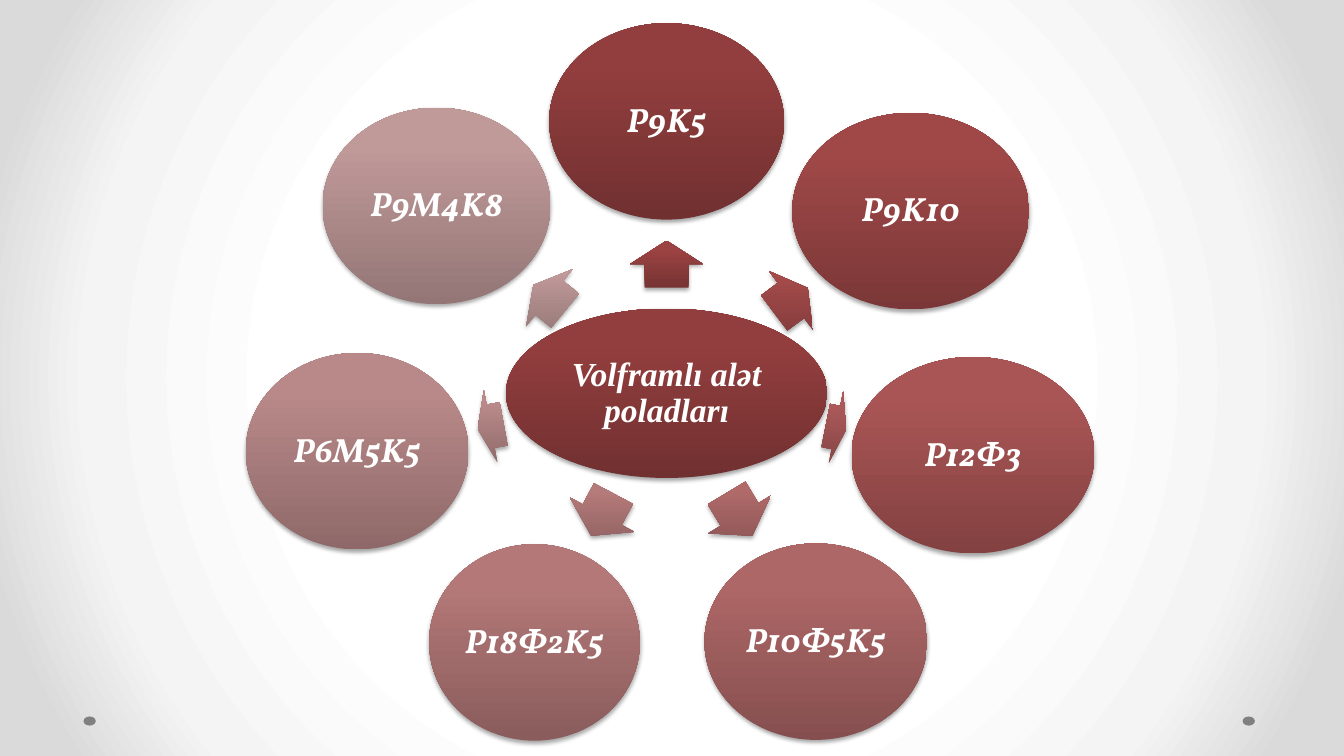
import math
from dataclasses import dataclass

import lxml.etree
import pptx
import pptx.dml.color
import pptx.enum.shapes
import pptx.enum.text
import pptx.oxml.ns
import pptx.util

Cm = pptx.util.Cm
Pt = pptx.util.Pt
RGBColor = pptx.dml.color.RGBColor
qn = pptx.oxml.ns.qn
SHAPE = pptx.enum.shapes.MSO_SHAPE

WHITE = RGBColor(0xFF, 0xFF, 0xFF)
BLACK = RGBColor(0x00, 0x00, 0x00)
DOT_GREY = RGBColor(0x80, 0x80, 0x80)
PALE_GREY = RGBColor(0xF4, 0xF4, 0xF4)
EDGE_GREY = RGBColor(0xDA, 0xDA, 0xDA)


def shades(*codes):
    return tuple(zip((0, 80, 100), map(RGBColor.from_string, codes)))


CRIMSON = shades("713030", "933E3E", "953D3D")
ROSE = shades("947676", "C09999", "C19999")


@dataclass
class Oval:
    label: str
    x: float
    y: float
    width: float
    height: float
    colors: tuple
    arrow_colors: tuple = ()
    font: str = "Vollkorn"

    def reach(self, angle):
        return 1 / math.hypot(2 * math.cos(angle) / self.width,
                              2 * math.sin(angle) / self.height)


def satellite(label, x, y, width, colors, arrow_colors):
    return Oval(label, x, y, width, 4.95, colors, arrow_colors)


HUB = Oval("Volframlı alət poladları", 16.8, 9.91, 8.1, 4.27, CRIMSON,
           font="Times New Roman")
STEELS = [
    satellite("Р9K5", 16.8, 3.06, 5.92, CRIMSON,
              shades("773333", "9B4242", "9D4040")),
    satellite("Р9K10", 22.95, 5.32, 5.97,
              shades("7B3737", "A04848", "A24747"),
              shades("803A3A", "A64B4B", "A94949")),
    satellite("Р12Ф3", 24.52, 11.47, 6.12,
              shades("834141", "AA5555", "AC5353"),
              shades("854545", "AC5959", "AF5858")),
    satellite("Р10Ф5K5", 20.56, 16.17, 5.61,
              shades("864F4F", "AE6767", "B16666"),
              shades("885252", "B06A6A", "B26969")),
    satellite("Р18Ф2K5", 13.47, 16.19, 5.31,
              shades("8A5C5C", "B47878", "B67878"),
              shades("8B5E5E", "B57A7A", "B77979")),
    satellite("Р6M5K5", 9.0, 11.37, 5.61,
              shades("8F6969", "B98989", "BB8989"),
              shades("8F6A6A", "BA8A8A", "BC8989")),
    satellite("Р9M4K8", 11.0, 5.19, 5.74, ROSE, ROSE),
]


def add_child(parent, tag, **attributes):
    child = lxml.etree.SubElement(parent, qn(tag))
    for name, value in attributes.items():
        child.set(name, str(value))
    return child


def make_gradient(owner, stops, radial=False):
    solid = owner.find(qn("a:solidFill"))
    gradient = add_child(owner, "a:gradFill", rotWithShape=0)
    stop_list = add_child(gradient, "a:gsLst")
    for position, color in stops:
        stop = add_child(stop_list, "a:gs", pos=position * 1000)
        add_child(stop, "a:srgbClr", val=color)
    if radial:
        center = add_child(gradient, "a:path", path="circle")
        add_child(center, "a:fillToRect", l=50000, t=50000, r=50000, b=50000)
    else:
        add_child(gradient, "a:lin", ang=270 * 60000, scaled=0)
    owner.replace(solid, gradient)


def add_centered(page, kind, x, y, width, height):
    shape = page.shapes.add_shape(kind, Cm(x - width / 2), Cm(y - height / 2),
                                  Cm(width), Cm(height))
    shape.shadow.inherit = False
    shape.line.fill.background()
    shape.fill.solid()
    return shape


def add_glossy(page, kind, x, y, width, height, colors):
    shape = add_centered(page, kind, x, y, width, height)
    properties = shape.element.spPr
    make_gradient(properties, colors)
    shadow = add_child(properties.find(qn("a:effectLst")), "a:outerShdw",
                       blurRad=Pt(3.1), dist=Pt(1.8), dir=90 * 60000,
                       rotWithShape=0)
    tint = add_child(shadow, "a:srgbClr", val=BLACK)
    add_child(tint, "a:alpha", val=35000)
    return shape


def add_oval(page, oval):
    shape = add_glossy(page, SHAPE.OVAL, oval.x, oval.y, oval.width,
                       oval.height, oval.colors)
    frame = shape.text_frame
    frame.word_wrap = True
    frame.vertical_anchor = pptx.enum.text.MSO_ANCHOR.MIDDLE
    frame.margin_left = frame.margin_right = Cm(0.08)
    frame.margin_top = frame.margin_bottom = Cm(0.08)
    para = frame.paragraphs[0]
    para.alignment = pptx.enum.text.PP_ALIGN.CENTER
    para.line_spacing = 0.9
    span = para.add_run()
    span.text = oval.label
    span.font.name = oval.font
    span.font.size = Pt(24)
    span.font.bold = True
    span.font.italic = True
    span.font.color.rgb = WHITE


def add_arrow(page, hub, target):
    across, down = target.x - hub.x, target.y - hub.y
    angle = math.atan2(down, across)
    start = hub.reach(angle)
    gap = math.hypot(across, down) - start - target.reach(angle)
    middle = start + gap / 2
    arrow = add_glossy(page, SHAPE.RIGHT_ARROW,
                       hub.x + middle * math.cos(angle),
                       hub.y + middle * math.sin(angle),
                       0.53 * gap, 1.85, target.arrow_colors)
    arrow.adjustments[0] = 0.6
    arrow.adjustments[1] = 0.5
    arrow.rotation = math.degrees(angle) % 360


def add_backdrop(page):
    page.background.fill.solid()
    make_gradient(page.element.find(".//" + qn("p:bgPr")),
                  ((50, WHITE), (76, PALE_GREY), (92, EDGE_GREY)), radial=True)
    for x in (31.47, 2.26):
        dot = add_centered(page, SHAPE.OVAL, x, 18.17, 0.31, 0.23)
        dot.fill.fore_color.rgb = DOT_GREY


def add_radial_diagram(page, hub, steels):
    add_oval(page, hub)
    for steel in steels:
        add_arrow(page, hub, steel)
        add_oval(page, steel)


def main():
    deck = pptx.Presentation()
    deck.slide_width = Cm(33.87)
    deck.slide_height = Cm(19.05)
    page = deck.slides.add_slide(deck.slide_layouts[6])
    add_backdrop(page)
    add_radial_diagram(page, HUB, STEELS)
    deck.save("out.pptx")


if __name__ == "__main__":
    main()
